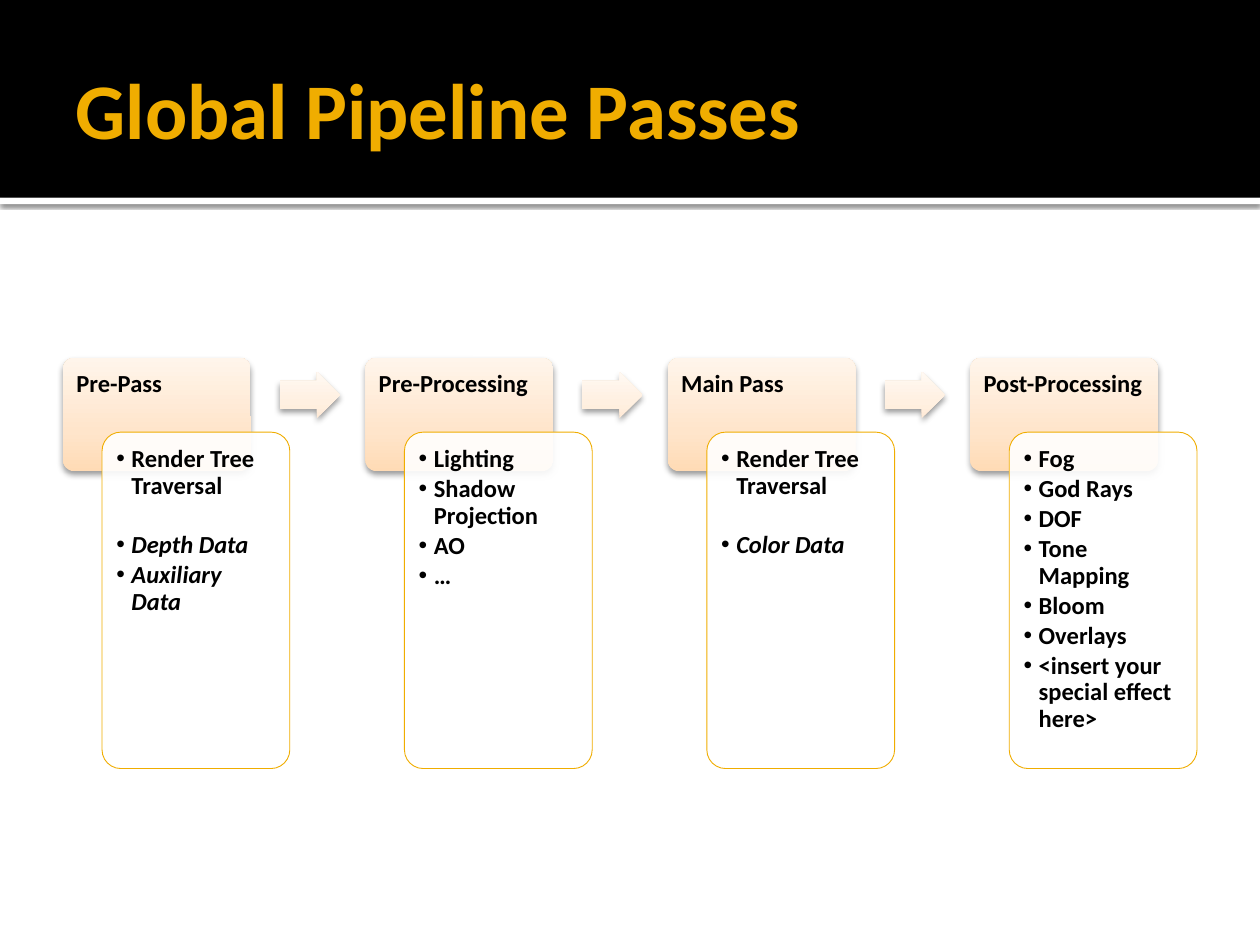
from pptx import Presentation
from pptx.dml.color import RGBColor
from pptx.enum.shapes import MSO_SHAPE as SHAPE
from pptx.enum.text import MSO_ANCHOR as ANCHOR, PP_ALIGN as ALIGN
from pptx.oxml import parse_xml
from pptx.oxml.ns import nsdecls
from pptx.util import Inches, Pt

BLACK = RGBColor(0x00, 0x00, 0x00)
WHITE = RGBColor(0xFF, 0xFF, 0xFF)
AMBER = RGBColor(0xF0, 0xAD, 0x00)
CARD_STOPS = [
    (0, RGBColor(0xFF, 0xDB, 0xB5)),
    (35, RGBColor(0xFF, 0xE5, 0xCB)),
    (100, RGBColor(0xFF, 0xF5, 0xEB)),
]
ARROW_STOPS = [
    (0, RGBColor(0xFF, 0xEA, 0xD6)),
    (35, RGBColor(0xFF, 0xF0, 0xE1)),
    (100, RGBColor(0xFF, 0xF9, 0xF3)),
]
FONT = "Calibri"
NS = nsdecls("a")
ITEM_GAP, GROUP_GAP = 2, 19

PASSES = [
    ("Pre-Pass", [["Render Tree Traversal"], ["Depth Data", "Auxiliary Data"]]),
    ("Pre-Processing", [["Lighting", "Shadow Projection", "AO", "…"]]),
    ("Main Pass", [["Render Tree Traversal"], ["Color Data"]]),
    ("Post-Processing", [["Fog", "God Rays", "DOF", "Tone Mapping", "Bloom",
                          "Overlays", "<insert your special effect here>"]]),
]


def add_box(s, kind, x, y, w, h):
    sp = s.shapes.add_shape(kind, Inches(x), Inches(y), Inches(w), Inches(h))
    sp.line.fill.background()
    return sp


def set_solid(sp, color):
    sp.fill.solid()
    sp.fill.fore_color.rgb = color


def set_gradient(sp, stops):
    marks = "".join(
        f'<a:gs pos="{pos * 1000}"><a:srgbClr val="{color}"/></a:gs>'
        for pos, color in stops)
    grad = parse_xml(f'<a:gradFill {NS} rotWithShape="1"><a:gsLst>{marks}</a:gsLst>'
                     '<a:lin ang="16200000" scaled="0"/></a:gradFill>')
    sp._element.spPr.find("{*}ln").addprevious(grad)


def set_shadow(sp, alpha, blur, dist):
    sp._element.spPr.append(parse_xml(
        f'<a:effectLst {NS}><a:outerShdw blurRad="{Pt(blur)}" dist="{Pt(dist)}" '
        'dir="5400000" algn="ctr" rotWithShape="0">'
        f'<a:srgbClr val="{BLACK}"><a:alpha val="{alpha * 1000}"/></a:srgbClr>'
        '</a:outerShdw></a:effectLst>'))


def set_frame(sp, anchor, left, top, right, bottom):
    tf = sp.text_frame
    tf.word_wrap = True
    tf.vertical_anchor = anchor
    tf.margin_left, tf.margin_top = Inches(left), Inches(top)
    tf.margin_right, tf.margin_bottom = Inches(right), Inches(bottom)
    return tf


def format_text(p, size, color, italic=None):
    p.alignment = ALIGN.LEFT
    for r in p.runs:
        r.font.name, r.font.size = FONT, Pt(size)
        r.font.bold, r.font.italic = True, italic
        r.font.color.rgb = color


def add_bullet(p):
    pPr = p._p.get_or_add_pPr()
    pPr.set("marL", str(Inches(0.12)))
    pPr.set("indent", str(Inches(-0.12)))
    pPr.append(parse_xml(f'<a:buFont {NS} typeface="Arial"/>'))
    pPr.append(parse_xml(f'<a:buChar {NS} char="•"/>'))


def add_heading(s, text, w, h):
    rule = add_box(s, SHAPE.RECTANGLE, 0, h, w, 0.05)
    set_solid(rule, WHITE)
    set_shadow(rule, 60, 2.5, 0.8)
    band = add_box(s, SHAPE.RECTANGLE, 0, 0, w, h)
    set_solid(band, BLACK)
    band.shadow.inherit = False

    title = s.shapes.title
    band._element.addnext(title._element)
    title.left, title.top = Inches(0.05 * w), Inches(0.17)
    title.width, title.height = Inches(0.9 * w), Inches(h - 0.2)
    tf = set_frame(title, ANCHOR.MIDDLE, 0.1, 0.05, 0.05, 0.05)
    tf.text = text
    format_text(tf.paragraphs[0], 45, AMBER)


def add_card(s, name, x, y, w, h):
    sp = add_box(s, SHAPE.ROUNDED_RECTANGLE, x, y, w, h)
    sp.adjustments[0] = 0.1
    set_gradient(sp, CARD_STOPS)
    set_shadow(sp, 38, 3.5, 2)
    tf = set_frame(sp, ANCHOR.TOP, 0.08, 0.08, 0.08, 0.06)
    tf.text = name
    p = tf.paragraphs[0]
    p.line_spacing = 0.9
    format_text(p, 14, BLACK)


def add_details(s, groups, x, y, w, h):
    sp = add_box(s, SHAPE.ROUNDED_RECTANGLE, x, y, w, h)
    sp.adjustments[0] = 0.1
    set_solid(sp, WHITE)
    sp._element.spPr.find(".//{*}srgbClr").append(
        parse_xml(f'<a:alpha {NS} val="90000"/>'))
    sp.line.color.rgb = AMBER
    sp.line.width = Pt(0.5)
    sp.shadow.inherit = False
    tf = set_frame(sp, ANCHOR.TOP, 0.07, 0.07, 0.07, 0.07)
    tf.text = "\n".join(item for group in groups for item in group)
    paragraphs = iter(tf.paragraphs)
    for i, group in enumerate(groups):
        for item in group:
            p = next(paragraphs)
            p.line_spacing = 0.9
            p.space_after = Pt(GROUP_GAP if i < len(groups) - 1 else ITEM_GAP)
            add_bullet(p)
            format_text(p, 14, BLACK, italic=i > 0)


def add_arrow(s, x, y, w, h):
    sp = add_box(s, SHAPE.RIGHT_ARROW, x, y, w, h)
    sp.adjustments[0], sp.adjustments[1] = 0.6, 0.5
    set_gradient(sp, ARROW_STOPS)
    set_shadow(sp, 38, 3.5, 2)


def add_pipeline(s, passes, x, y, w, h):
    card_w, offset_x, offset_y = 1.49, 0.31, 0.59
    pitch = (w - card_w - offset_x) / (len(passes) - 1)
    for i, (name, groups) in enumerate(passes):
        left = x + i * pitch
        add_card(s, name, left, y, card_w, 0.9)
        add_details(s, groups, left + offset_x, y + offset_y, card_w, h - offset_y)
        if i < len(passes) - 1:
            add_arrow(s, left + 1.72, y + 0.11, 0.48, 0.37)


def main():
    prs = Presentation()
    prs.slide_width, prs.slide_height = Inches(10), Inches(7.5)
    s = prs.slides.add_slide(prs.slide_layouts[5])
    add_heading(s, "Global Pipeline Passes", 10, 1.57)
    add_pipeline(s, PASSES, 0.5, 2.84, 9, 3.26)
    prs.save("out.pptx")


if __name__ == "__main__":
    main()
